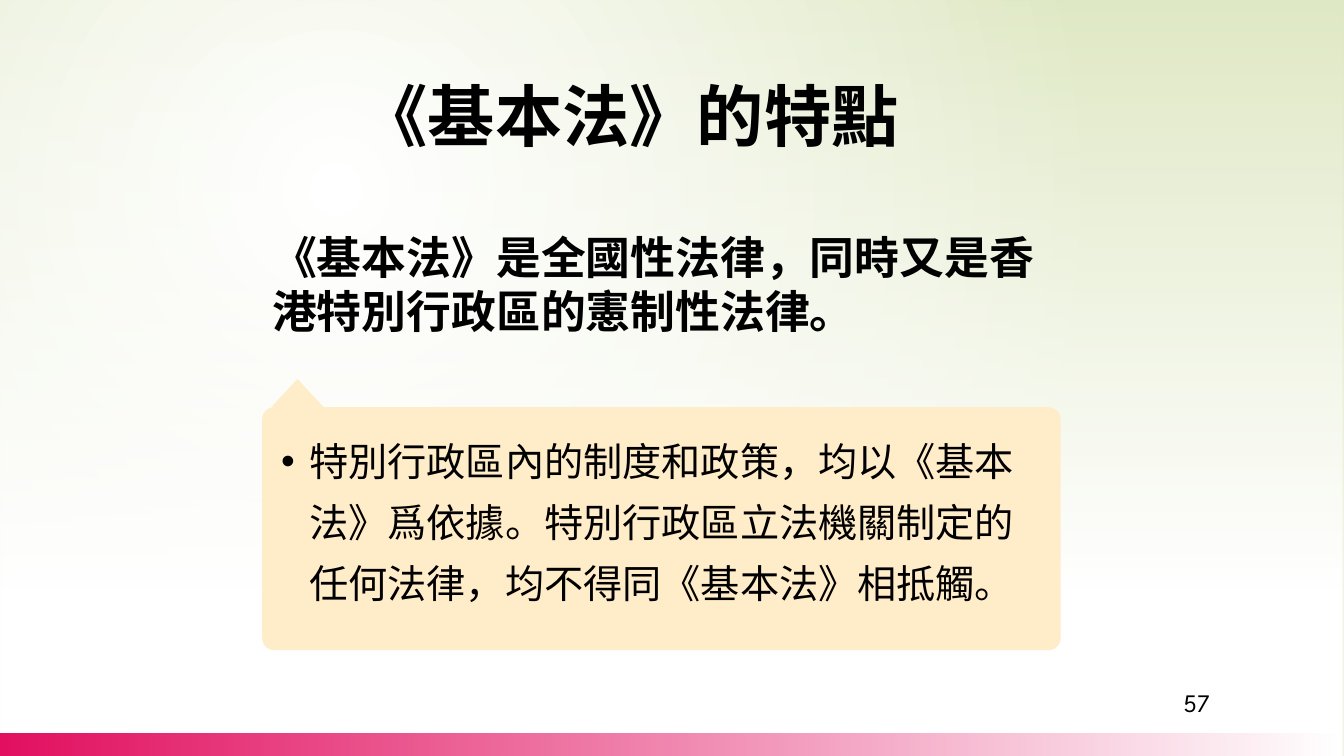
from dataclasses import dataclass

from lxml import etree
from pptx import Presentation
from pptx.dml.color import RGBColor
from pptx.enum.shapes import MSO_SHAPE as Shape
from pptx.enum.text import MSO_AUTO_SIZE as AutoSize, PP_ALIGN as Align
from pptx.oxml.ns import qn
from pptx.util import Inches, Pt


@dataclass(frozen=True)
class Theme:
    white: str = "FFFFFF"
    leaf: str = "DFE8C4"
    pink: str = "E30F60"
    cream: str = "FFECC8"
    ink: str = "000000"
    font: str = "Calibri"
    number_font: str = "League Spartan"
    title_size: int = 48
    lead_size: int = 32
    body_size: int = 28
    number_size: int = 18


class SlideBuilder:
    def __init__(self, slide, theme):
        self.slide = slide
        self.theme = theme

    def gradient(self, fill, owner, stops, angle=None):
        """Fill with (position, colour, opacity) stops; without an angle, circle out from the upper left."""
        fill.gradient()
        gradient = next(owner.iter(qn("a:gradFill")))
        for child in list(gradient):
            gradient.remove(child)
        stop_list = etree.SubElement(gradient, qn("a:gsLst"))
        for position, color, opacity in stops:
            stop = etree.SubElement(stop_list, qn("a:gs"), pos=str(position * 1000))
            rgb = etree.SubElement(stop, qn("a:srgbClr"), val=color)
            if opacity < 100:
                etree.SubElement(rgb, qn("a:alpha"), val=str(opacity * 1000))
        if angle is None:
            circle = etree.SubElement(gradient, qn("a:path"), path="circle")
            etree.SubElement(circle, qn("a:fillToRect"),
                             l="50000", t="50000", r="100000", b="100000")
        else:
            etree.SubElement(gradient, qn("a:lin"), ang=str(angle * 60000), scaled="0")

    def background(self, stops):
        self.gradient(self.slide.background.fill, self.slide.element, stops)

    def shape(self, kind, box, color=None, adjustment=None):
        shape = self.slide.shapes.add_shape(kind, *map(Inches, box))
        shape.shadow.inherit = False
        shape.line.fill.background()
        if color:
            shape.fill.solid()
            shape.fill.fore_color.rgb = RGBColor.from_string(color)
        if adjustment is not None:
            shape.adjustments[0] = adjustment
        return shape

    def band(self, box, stops, angle):
        shape = self.shape(Shape.RECTANGLE, box)
        self.gradient(shape.fill, shape.element, stops, angle)

    def text(self, box, content, size, font=None, bold=False, wrap=True,
             align=None, bullet=None, spacing=None, grow=True):
        frame = self.slide.shapes.add_textbox(*map(Inches, box)).text_frame
        frame.word_wrap = wrap
        frame.auto_size = AutoSize.SHAPE_TO_FIT_TEXT if grow else AutoSize.NONE
        paragraph = frame.paragraphs[0]
        paragraph.text = content
        paragraph.alignment = align
        paragraph.line_spacing = spacing
        if bullet:
            indent = Inches(0.28)
            properties = paragraph._p.get_or_add_pPr()
            properties.set("marL", str(indent))
            properties.set("indent", str(-indent))
            etree.SubElement(properties, qn("a:buFont"), typeface="Arial")
            etree.SubElement(properties, qn("a:buChar"), char=bullet)
        paragraph.font.name = font or self.theme.font
        paragraph.font.size = Pt(size)
        paragraph.font.bold = bold
        paragraph.font.color.rgb = RGBColor.from_string(self.theme.ink)


def main():
    presentation = Presentation()
    presentation.slide_width = Inches(13.33)
    presentation.slide_height = Inches(7.5)
    theme = Theme()
    slide = presentation.slides.add_slide(presentation.slide_layouts[6])
    builder = SlideBuilder(slide, theme)

    builder.background([(0, theme.white, 100), (100, theme.leaf, 100)])
    builder.band((0, 0, 13.33, 7.5),
                 [(0, theme.white, 0), (34, theme.white, 44), (78, theme.white, 100)], 90)
    builder.band((0, 7.28, 13.33, 0.22),
                 [(0, theme.pink, 100), (100, theme.pink, 0)], 0)

    builder.text((2.6, 2.23, 7.92, 1.18),
                 "《基本法》是全國性法律，同時又是香港特別行政區的憲制性法律。",
                 theme.lead_size, bold=True)
    builder.shape(Shape.ROUNDED_RECTANGLE, (2.6, 4.04, 7.92, 2.41), theme.cream, 0.05)
    builder.text((2.69, 4.15, 7.74, 1.94),
                 "特別行政區內的制度和政策，均以《基本法》爲依據。"
                 "特別行政區立法機關制定的任何法律，均不得同《基本法》相抵觸。",
                 theme.body_size, bullet="•", spacing=1.3)
    builder.shape(Shape.ISOSCELES_TRIANGLE, (2.69, 3.76, 0.52, 0.28), theme.cream)
    builder.text((11.64, 6.77, 0.54, 0.41), "57", theme.number_size,
                 font=theme.number_font, grow=False)
    builder.text((3.45, 0.69, 5.59, 0.91), "《基本法》的特點", theme.title_size,
                 bold=True, wrap=False, align=Align.CENTER)

    presentation.save("out.pptx")


if __name__ == "__main__":
    main()
